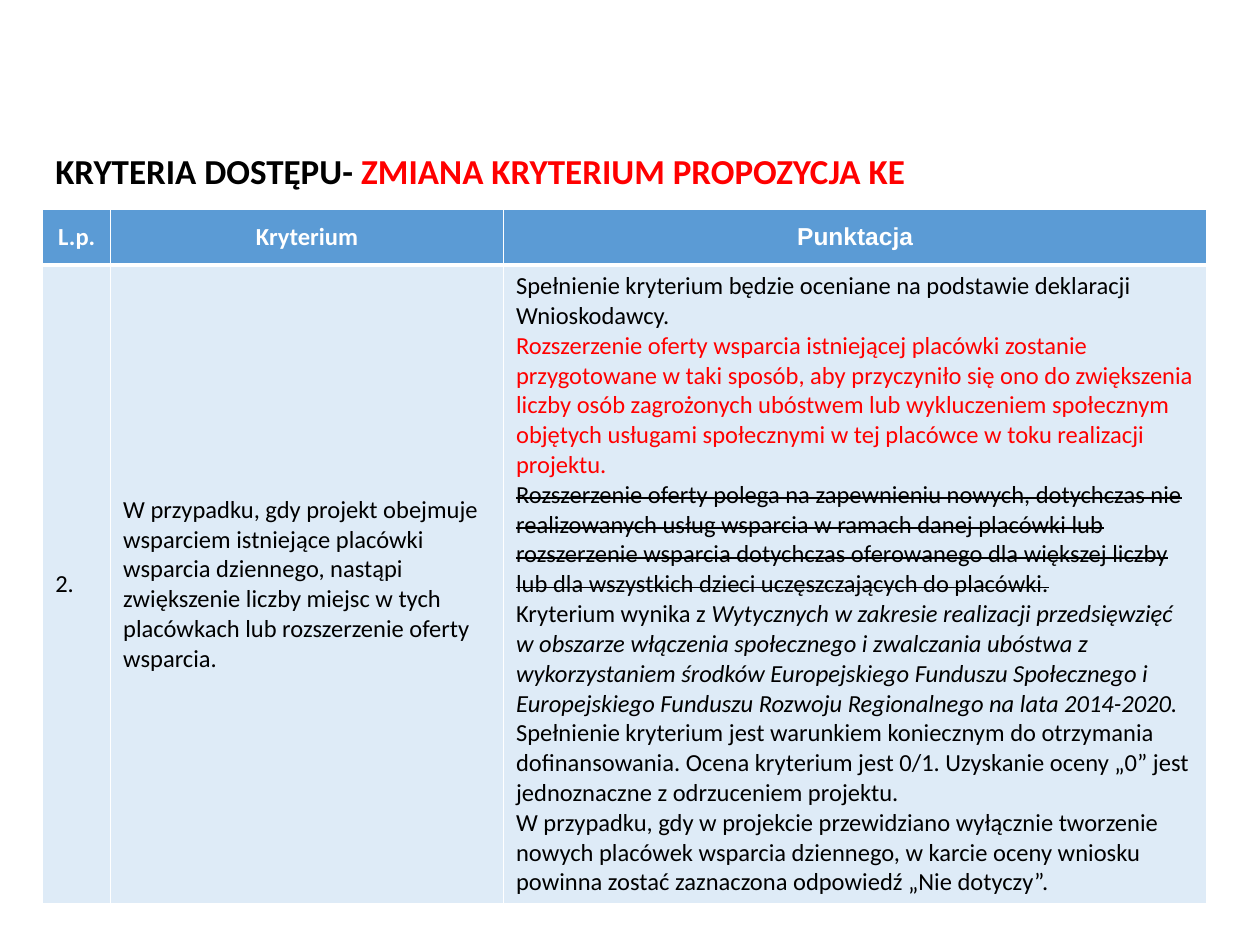
import pptx
import pptx.util
import pptx.dml.color
import pptx.enum.text
from lxml import etree
from pptx.util import Cm

COLOURS = {
    "header": "5B9BD5",
    "body": "DEEBF7",
    "white": "FFFFFF",
    "black": "000000",
    "red": "FF0000",
}
ALIGN = pptx.enum.text.PP_ALIGN
ANCHOR = pptx.enum.text.MSO_ANCHOR


def add_run(paragraph, text, colour="black", size=14, strike=False, **font_format):
    run = paragraph.add_run()
    run.text = text
    values = {"name": "Calibri", "size": pptx.util.Pt(size), "bold": False, **font_format}
    for attribute, value in values.items():
        setattr(run.font, attribute, value)
    run.font.color.rgb = pptx.dml.color.RGBColor.from_string(COLOURS[colour])
    if strike:
        run.font._element.set("strike", "sngStrike")


def format_cell(cell, fill, bottom_width):
    """Fill a cell and give it white borders."""
    cell.vertical_anchor = ANCHOR.MIDDLE
    properties = cell._tc.get_or_add_tcPr()
    widths = {"lnL": 1, "lnR": 1, "lnT": 1, "lnB": bottom_width}
    for tag, width in widths.items():
        line = etree.SubElement(properties, pptx.oxml.ns.qn(f"a:{tag}"), w=str(pptx.util.Pt(width)))
        solid = etree.SubElement(line, pptx.oxml.ns.qn("a:solidFill"))
        etree.SubElement(solid, pptx.oxml.ns.qn("a:srgbClr"), val=COLOURS["white"])
    cell.fill.solid()
    cell.fill.fore_color.rgb = pptx.dml.color.RGBColor.from_string(COLOURS[fill])


presentation = pptx.Presentation()
presentation.slide_width = Cm(25.4)
presentation.slide_height = Cm(19.05)
slide = presentation.slides.add_slide(presentation.slide_layouts[5])

title = slide.shapes.title
title_place = {"left": Cm(0.86), "top": Cm(2.87), "width": Cm(20.78), "height": Cm(1.12)}
for attribute, value in title_place.items():
    setattr(title, attribute, value)
title.text_frame.word_wrap = True
title.text_frame.auto_size = pptx.enum.text.MSO_AUTO_SIZE.SHAPE_TO_FIT_TEXT
title.text_frame.vertical_anchor = ANCHOR.MIDDLE
title_paragraph = title.text_frame.paragraphs[0]
title_paragraph.alignment = ALIGN.LEFT
add_run(title_paragraph, "KRYTERIA DOSTĘPU- ", size=20, bold=True)
add_run(title_paragraph, "ZMIANA KRYTERIUM PROPOZYCJA KE", "red", size=20, bold=True)

column_widths = [1.37, 7.92, 14.18]
row_heights = [1.12, 12.88]
table = slide.shapes.add_table(
    2, 3, Cm(0.86), Cm(4.22), Cm(sum(column_widths)), Cm(sum(row_heights))
).table
for column, width in zip(table.columns, column_widths):
    column.width = Cm(width)
for row, height in zip(table.rows, row_heights):
    row.height = Cm(height)

headers = [("L.p.", "Calibri"), ("Kryterium", "Calibri"), ("Punktacja", "Arial")]
for index, (text, font_name) in enumerate(headers):
    cell = table.cell(0, index)
    format_cell(cell, "header", 3)
    paragraph = cell.text_frame.paragraphs[0]
    paragraph.alignment = ALIGN.CENTER
    add_run(paragraph, text, "white", bold=True, name=font_name)

# Each cell is a list of paragraphs, each paragraph a list of (text, format) runs.
criterion_row = [
    [[("2.", {})]],
    [[("W przypadku, gdy projekt obejmuje wsparciem istniejące placówki wsparcia dziennego, "
       "nastąpi zwiększenie liczby miejsc w tych placówkach lub rozszerzenie oferty wsparcia.", {})]],
    [
        [("Spełnienie kryterium będzie oceniane na podstawie deklaracji Wnioskodawcy.", {})],
        [("Rozszerzenie oferty wsparcia istniejącej placówki zostanie przygotowane w taki sposób, "
          "aby przyczyniło się ono do zwiększenia liczby osób zagrożonych ubóstwem lub "
          "wykluczeniem społecznym objętych usługami społecznymi w tej placówce w toku "
          "realizacji projektu.", {"colour": "red"})],
        [("Rozszerzenie oferty polega na zapewnieniu nowych, dotychczas nie realizowanych usług "
          "wsparcia w ramach danej placówki lub rozszerzenie wsparcia dotychczas oferowanego dla "
          "większej liczby lub dla wszystkich dzieci uczęszczających do placówki.",
          {"strike": True})],
        [("Kryterium wynika z ", {}),
         ("Wytycznych w zakresie realizacji przedsięwzięć w obszarze włączenia społecznego i "
          "zwalczania ubóstwa z wykorzystaniem środków Europejskiego Funduszu Społecznego i "
          "Europejskiego Funduszu Rozwoju Regionalnego na lata 2014-2020.", {"italic": True})],
        [("Spełnienie kryterium jest warunkiem koniecznym do otrzymania dofinansowania. Ocena "
          "kryterium jest 0/1. Uzyskanie oceny „0” jest jednoznaczne z odrzuceniem projektu.", {})],
        [("W przypadku, gdy w projekcie przewidziano wyłącznie tworzenie nowych placówek wsparcia "
          "dziennego, w karcie oceny wniosku powinna zostać zaznaczona odpowiedź „Nie dotyczy”.",
          {})],
    ],
]
for index, paragraphs in enumerate(criterion_row):
    cell = table.cell(1, index)
    format_cell(cell, "body", 1)
    for number, runs in enumerate(paragraphs):
        frame = cell.text_frame
        paragraph = frame.add_paragraph() if number else frame.paragraphs[0]
        for text, run_format in runs:
            add_run(paragraph, text, **run_format)

presentation.save("out.pptx")
